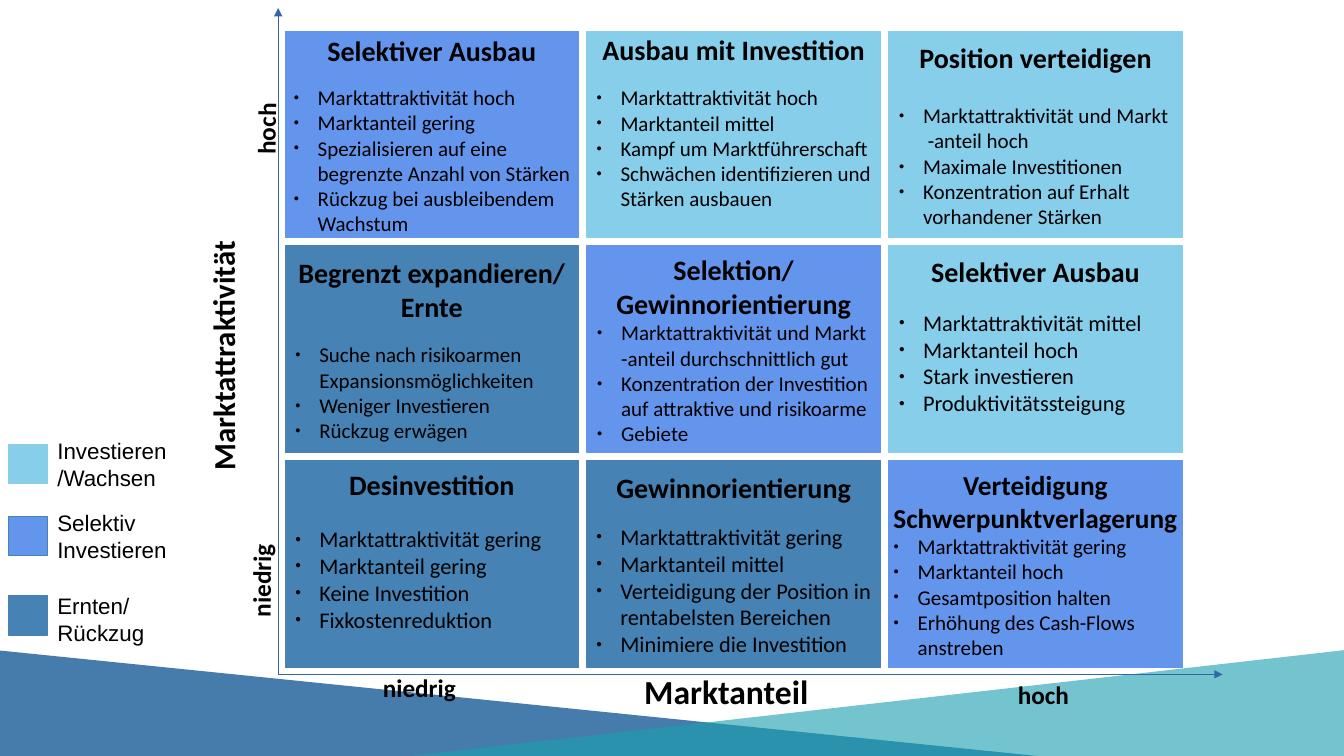
import lxml.etree
import pptx
import pptx.dml.color
import pptx.enum.shapes
import pptx.enum.text
import pptx.oxml.ns
import pptx.util

RGB = pptx.dml.color.RGBColor
SKY = RGB(0x87, 0xCE, 0xEB)
CORN = RGB(0x64, 0x95, 0xED)
STEEL = RGB(0x46, 0x82, 0xB4)
NAVY = RGB(0x09, 0x51, 0x91)
TEAL = RGB(0x1B, 0xA0, 0xAF)
AXIS = RGB(0x34, 0x65, 0xA4)
BLACK = RGB(0, 0, 0)

KIND = pptx.enum.shapes.MSO_SHAPE
LEFT = pptx.enum.text.PP_ALIGN.LEFT
CENTER = pptx.enum.text.PP_ALIGN.CENTER
MIDDLE = pptx.enum.text.MSO_ANCHOR.MIDDLE
INDENT = pptx.util.Inches(0.24)

# Matrix grid, in percent of the slide: start, step and size
COLS = (21.22, 22.46, 21.82)
ROWS = (4.13, 28.4, 27.33)

# row, column, colour, title lines, title size, gap below title,
# body size, free points at the foot, body lines (">" continues a bullet)
CELLS = [
    (0, 0, CORN, ["Selektiver Ausbau"], 20, 12.8, 15, 0,
     ["Marktattraktivität hoch", "Marktanteil gering", "Spezialisieren auf eine",
      ">begrenzte Anzahl von Stärken", "Rückzug bei ausbleibendem", ">Wachstum"]),
    (0, 1, SKY, ["Ausbau mit Investition"], 20, 13.4, 15, 18.3,
     ["Marktattraktivität hoch", "Marktanteil mittel", "Kampf um Marktführerschaft",
      "Schwächen identifizieren und", ">Stärken ausbauen"]),
    (0, 2, SKY, ["Position verteidigen"], 20, 20.7, 15, 0,
     ["Marktattraktivität und Markt", "> -anteil hoch", "Maximale Investitionen",
      "Konzentration auf Erhalt", ">vorhandener Stärken"]),
    (1, 0, STEEL, ["Begrenzt expandieren/", "Ernte"], 20, 13.4, 15, 0,
     ["Suche nach risikoarmen", ">Expansionsmöglichkeiten", "Weniger Investieren",
      "Rückzug erwägen"]),
    (1, 1, CORN, ["Selektion/", "Gewinnorientierung"], 20, 0, 15, 0,
     ["Marktattraktivität und Markt", ">-anteil durchschnittlich gut",
      "Konzentration der Investition", ">auf attraktive und risikoarme", "Gebiete"]),
    (1, 2, SKY, ["Selektiver Ausbau"], 20, 14.6, 16, 19.5,
     ["Marktattraktivität mittel", "Marktanteil hoch", "Stark investieren",
      "Produktivitätssteigung"]),
    (2, 0, STEEL, ["Desinvestition"], 20, 17, 16, 19.5,
     ["Marktattraktivität gering", "Marktanteil gering", "Keine Investition",
      "Fixkostenreduktion"]),
    (2, 1, STEEL, ["Gewinnorientierung"], 20, 13.4, 16, 0,
     ["Marktattraktivität gering", "Marktanteil mittel", "Verteidigung der Position in",
      ">rentabelsten Bereichen", "Minimiere die Investition"]),
    (2, 2, CORN, ["Verteidigung", "Schwerpunktverlagerung"], 19.5, 0, 15, 0,
     ["Marktattraktivität gering", "Marktanteil hoch", "Gesamtposition halten",
      "Erhöhung des Cash-Flows", ">anstreben"]),
]

# text, box in percent, size, alignment, rotation
LABELS = [
    ("Marktanteil", (36.6, 88.13, 34.88, 6.67), 24, CENTER, 0),
    ("Marktattraktivität", (-0.3, 44, 33.68, 6.13), 22, CENTER, 269.8),
    ("hoch", (75, 89.2, 8.85, 5.33), 18, LEFT, 0),
    ("niedrig", (27.75, 88.27, 8.85, 5.33), 18, LEFT, 0),
    ("hoch", (15.38, 11.2, 8.85, 5.33), 18, LEFT, 270.7),
    ("niedrig", (15, 72.4, 8.85, 5.33), 18, LEFT, 270.6),
]

# lines, fill, outline, top of square, top of text, text width
LEGEND = [
    (["Investieren/Wachsen"], SKY, SKY, 58.8, 57.2, 10.05),
    (["Selektiv", "Investieren"], CORN, STEEL, 68.27, 66.67, 10.65),
    (["Ernten/ Rückzug"], STEEL, STEEL, 78.8, 77.73, 10.65),
]


def node(parent, tag, **attrs):
    return lxml.etree.SubElement(parent, pptx.oxml.ns.qn(tag), attrs)


class Board:
    """Holds the slide and its style; boxes are given in percent of the slide."""

    def __init__(self, deck):
        self.wide, self.high = deck.slide_width, deck.slide_height
        self.slide = deck.slides.add_slide(deck.slide_layouts[6])
        self.shapes = self.slide.shapes
        self.style = {"name": "Calibri", "bold": False}

    def scale(self, box):
        sides = (self.wide, self.high) * 2
        return [round(part * side / 100) for part, side in zip(box, sides)]

    def shape(self, kind, box, fill, edge=None):
        item = self.shapes.add_shape(kind, *self.scale(box))
        item.shadow.inherit = False
        item.fill.solid()
        item.fill.fore_color.rgb = fill
        if edge is None:
            item.line.fill.background()
        else:
            item.line.color.rgb = edge
            item.line.width = pptx.util.Pt(0.75)
        return item

    def hill(self, box, fill, peak, alpha):
        """Draw a see-through triangle."""
        item = self.shape(KIND.ISOSCELES_TRIANGLE, box, fill)
        item.adjustments[0] = peak
        tone = next(item.element.spPr.iter(pptx.oxml.ns.qn("a:srgbClr")))
        node(tone, "a:alpha", val=str(alpha * 1000))

    def words(self, para, text, size, align=LEFT, **style):
        para.alignment = align
        run = para.add_run()
        run.text = text
        run.font.color.rgb = BLACK
        look = {**self.style, "size": pptx.util.Pt(size), **style}
        for key, value in look.items():
            setattr(run.font, key, value)

    def bullet(self, para, text, size):
        more = text.startswith(">")
        props = para._p.get_or_add_pPr()
        props.set("marL", str(INDENT))
        props.set("indent", str(0 if more else -INDENT))
        if more:
            node(props, "a:buNone")
        else:
            node(node(props, "a:buClr"), "a:srgbClr", val="000000")
            node(props, "a:buSzPct", val="45000")
            node(props, "a:buFont", typeface="Arial")
            node(props, "a:buChar", char="●")
        self.words(para, text.lstrip(">"), size)

    def cell(self, row, col, fill, title, big, gap, size, foot, body):
        box = (COLS[0] + col * COLS[1], ROWS[0] + row * ROWS[1], COLS[2], ROWS[2])
        frame = self.shape(KIND.RECTANGLE, box, fill, fill).text_frame
        form = {"word_wrap": False, "vertical_anchor": MIDDLE,
                "margin_bottom": pptx.util.Pt(3.6 + foot)}
        for key, value in form.items():
            setattr(frame, key, value)
        para = frame.paragraphs[0]
        for spot, text in enumerate(title):
            para = frame.add_paragraph() if spot else para
            self.words(para, text, big, CENTER, bold=True)
        if gap:
            para.space_after = pptx.util.Pt(gap)
        for text in body:
            self.bullet(frame.add_paragraph(), text, size)

    def label(self, lines, box, size, align=LEFT, turn=0, **style):
        item = self.shapes.add_textbox(*self.scale(box))
        item.rotation = turn
        frame = item.text_frame
        frame.word_wrap = True
        for spot, text in enumerate(lines):
            para = frame.add_paragraph() if spot else frame.paragraphs[0]
            self.words(para, text, size, align, **style)

    def arrow(self, ends):
        kind = pptx.enum.shapes.MSO_CONNECTOR.STRAIGHT
        item = self.shapes.add_connector(kind, *self.scale(ends))
        item.line.color.rgb = AXIS
        item.line.width = pptx.util.Pt(0.75)
        node(item.line._get_or_add_ln(), "a:tailEnd", type="triangle")
        node(item._element.spPr, "a:effectLst")


def main():
    deck = pptx.Presentation()
    deck.slide_width = pptx.util.Inches(13.33)
    deck.slide_height = pptx.util.Inches(7.5)
    board = Board(deck)
    board.hill((-57.6, 86, 148.05, 16.4), NAVY, 0.387, 75)
    board.hill((14.7, 86, 170.63, 17.2), TEAL, 0.5, 61)
    for cell in CELLS:
        board.cell(*cell)
    for end in ((20.7, 1.07), (90.97, 89.2)):
        board.arrow((20.7, 89.2, *end))
    for text, box, size, align, turn in LABELS:
        board.label([text], box, size, align, turn, bold=True)
    for lines, fill, edge, top, head, width in LEGEND:
        board.shape(KIND.RECTANGLE, (0.6, top, 2.93, 5.2), fill, edge)
        board.label(lines, (3.53, head, width, 8.4), 16, name="Arial")
    deck.save("out.pptx")


if __name__ == "__main__":
    main()
